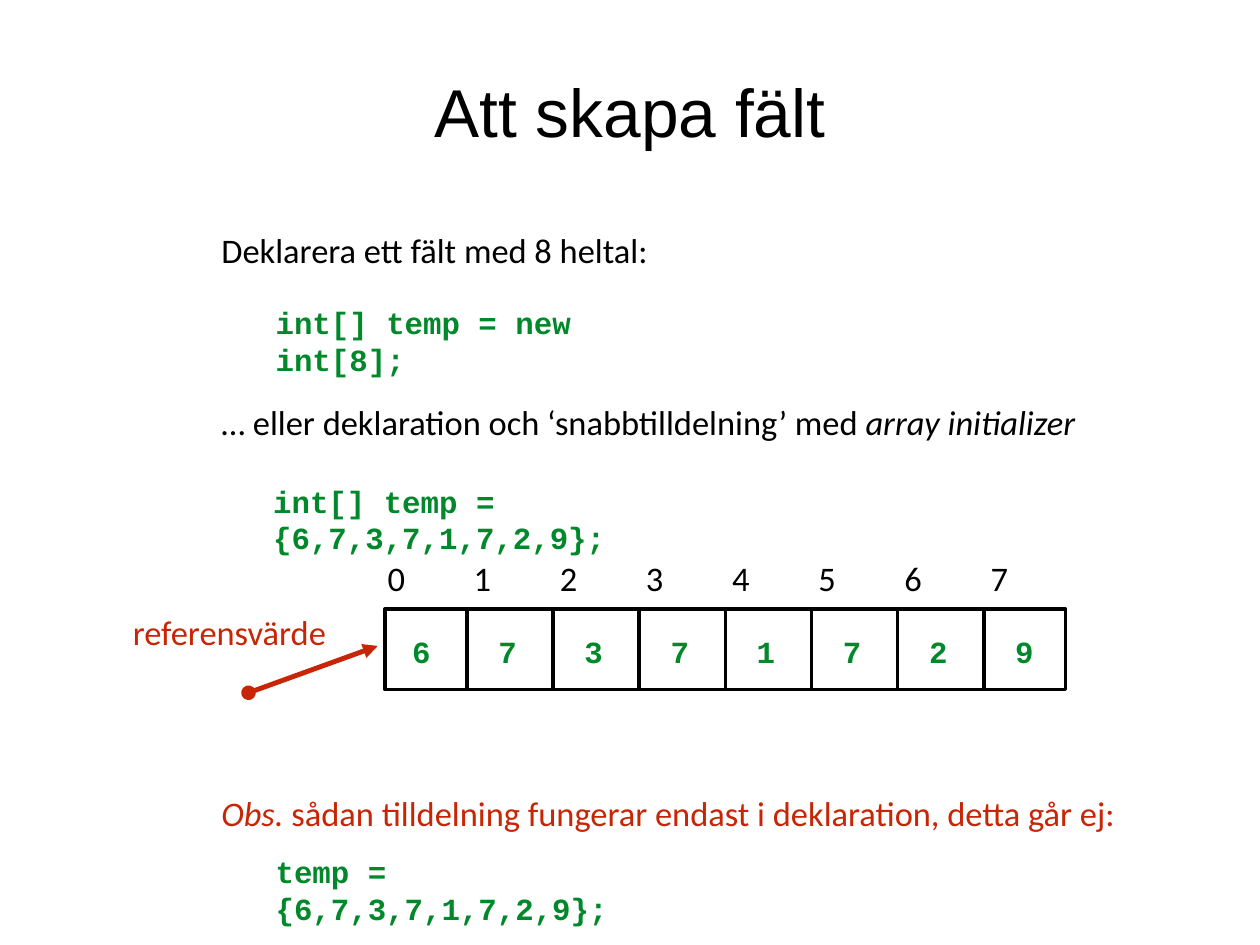
from lxml.etree import SubElement
from pptx import Presentation
from pptx.dml.color import RGBColor
from pptx.enum.shapes import MSO_CONNECTOR, MSO_SHAPE
from pptx.enum.text import MSO_ANCHOR, MSO_AUTO_SIZE, PP_ALIGN
from pptx.oxml.ns import qn
from pptx.util import Inches, Pt

COLORS = {"black": "000000", "code": "00882B", "warning": "C82506"}
WIDTH, HEIGHT = Inches(14.22), Inches(10.67)
COLUMN, ROW = WIDTH / 1024, HEIGHT / 768
VALUES = [6, 7, 3, 7, 1, 7, 2, 9]
CELL_WIDTH = 70


def place(left, top, width, height):
    return (round(left * COLUMN), round(top * ROW),
            round(width * COLUMN), round(height * ROW))


def write(frame, *parts, font="Calibri", size=28, color="black", bold=False,
          align=PP_ALIGN.LEFT, anchor=MSO_ANCHOR.TOP):
    frame.word_wrap = True
    frame.auto_size = MSO_AUTO_SIZE.NONE
    frame.vertical_anchor = anchor
    frame.margin_left = frame.margin_right = 0
    frame.margin_top = frame.margin_bottom = 0
    paragraph = frame.paragraphs[0]
    paragraph.alignment = align
    for text, italic in parts:
        run = paragraph.add_run()
        run.text = text
        run.font.name = font
        run.font.size = Pt(size)
        run.font.bold = bold
        run.font.italic = italic
        run.font.color.rgb = RGBColor.from_string(COLORS[color])


def add_title(slide, text):
    title = slide.shapes.title
    title.left, title.top, title.width, title.height = place(5, 5, 1014, 170)
    write(title.text_frame, (text, False), font="Arial", size=55,
          align=PP_ALIGN.CENTER, anchor=MSO_ANCHOR.MIDDLE)


def add_text(slide, box, *parts, **text_format):
    shape = slide.shapes.add_textbox(*place(*box))
    write(shape.text_frame, *parts, **text_format)


def add_code(slide, box, text):
    add_text(slide, box, (text, False), font="Courier New", size=25,
             color="code", bold=True)


def add_line(slide, start, end, color="black", width=3, arrow=False):
    connector = slide.shapes.add_connector(
        MSO_CONNECTOR.STRAIGHT, *place(*start, *end))
    connector.line.color.rgb = RGBColor.from_string(COLORS[color])
    connector.line.width = Pt(width)
    if arrow:
        line = connector.line._get_or_add_ln()
        SubElement(line, qn("a:headEnd"), type="oval")
        SubElement(line, qn("a:tailEnd"), type="triangle")
    SubElement(connector._element.spPr, qn("a:effectLst"))


def add_array(slide):
    frame = slide.shapes.add_shape(MSO_SHAPE.RECTANGLE,
                                   *place(313, 495, 553, 65.5))
    frame.shadow.inherit = False
    frame.fill.background()
    frame.line.color.rgb = RGBColor.from_string(COLORS["black"])
    frame.line.width = Pt(3)
    for index, value in enumerate(VALUES):
        offset = index * CELL_WIDTH
        add_text(slide, (315 + offset, 453, 46, 40), (str(index), False))
        add_code(slide, (335 + offset, 514, 23, 32), str(value))
        if index:
            divider = 309.5 + offset
            add_line(slide, (divider, 559), (divider, 495))


def main():
    presentation = Presentation()
    presentation.slide_width, presentation.slide_height = WIDTH, HEIGHT
    slide = presentation.slides.add_slide(presentation.slide_layouts[5])

    add_title(slide, "Att skapa fält")
    add_text(slide, (180, 186, 550, 40),
             ("Deklarera ett fält med 8 heltal:", False))
    add_code(slide, (224, 247, 339, 32), "int[] temp = new int[8];")
    add_text(slide, (180, 326, 720, 40),
             ("… eller deklaration och ‘snabbtilldelning’ med ", False),
             ("array initializer", True))
    add_code(slide, (222, 392, 435, 32), "int[] temp = {6,7,3,7,1,7,2,9};")

    add_text(slide, (108, 497, 276, 40), ("referensvärde", False),
             color="warning")
    add_array(slide)
    add_line(slide, (202, 563), (307, 525), color="warning", width=4,
             arrow=True)

    add_text(slide, (180, 644, 757, 53), ("Obs.", True),
             (" sådan tilldelning fungerar endast i deklaration, detta går ej:",
              False), color="warning")
    add_code(slide, (224, 693, 371, 35), "temp = {6,7,3,7,1,7,2,9};")
    presentation.save("out.pptx")


if __name__ == "__main__":
    main()
